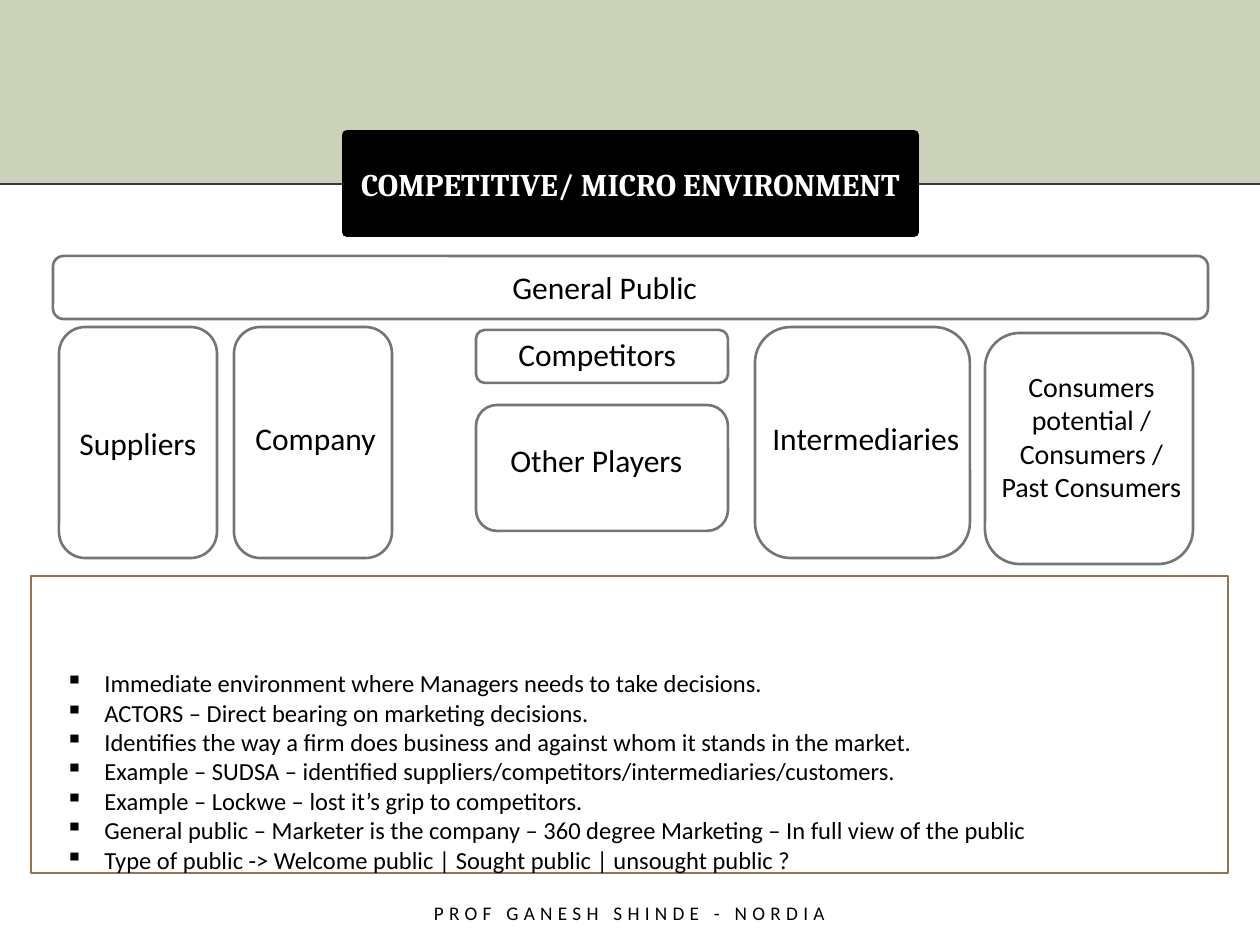
"""Build the competitive / micro environment slide."""
import pptx
import pptx.dml.color
import pptx.enum.shapes
import pptx.enum.text
import pptx.util
from lxml import etree

SCALE = 914400 / 126
SHAPE = pptx.enum.shapes.MSO_SHAPE
ALIGN = pptx.enum.text.PP_ALIGN
MIDDLE = pptx.enum.text.MSO_ANCHOR.MIDDLE

TITLE = "COMPETITIVE/ MICRO ENVIRONMENT"
FOOTER = "PROF GANESH SHINDE - NORDIA"
ACTOR_BOXES = [
    (53, 256, 1155, 63),
    (59, 327, 158, 231),
    (234, 327, 158, 231),
    (985, 333, 208, 231),
    (755, 327, 215, 231),
    (476, 330, 252, 53),
    (476, 405, 252, 126),
]
LABELS = [
    ("General Public", (500, 262, 300, 50), 18, ALIGN.LEFT),
    ("Competitors", (506, 329, 206, 50), 18, ALIGN.LEFT),
    ("Other Players", (498, 435, 219, 50), 18, ALIGN.LEFT),
    ("Suppliers", (67, 418, 150, 50), 18, ALIGN.LEFT),
    ("Company", (243, 413, 150, 50), 18, ALIGN.LEFT),
    ("Intermediaries", (760, 413, 215, 50), 18, ALIGN.LEFT),
    ("Consumers potential / Consumers / Past Consumers", (984, 363, 215, 149), 16, ALIGN.CENTER),
]
NOTES = [
    "Immediate environment where Managers needs to take decisions.",
    "ACTORS – Direct bearing on marketing decisions.",
    "Identifies the way a firm does business and against whom it stands in the market.",
    "Example – SUDSA – identified suppliers/competitors/intermediaries/customers.",
    "Example – Lockwe – lost it’s grip to competitors.",
    "General public – Marketer is the company – 360 degree Marketing – In full view of the public",
    "Type of public -> Welcome public | Sought public | unsought public ?",
]


def px(length):
    return pptx.util.Emu(round(length * SCALE))


def color(value):
    return pptx.dml.color.RGBColor.from_string(value)


def paint(shape, fill, line=None, width=1.5):
    shape.fill.solid()
    shape.fill.fore_color.rgb = color(fill)
    if line:
        shape.line.color.rgb = color(line)
        shape.line.width = pptx.util.Pt(width)
    else:
        shape.line.fill.background()


def add_box(slide, kind, place, fill, line=None):
    shape = slide.shapes.add_shape(kind, *map(px, place))
    shape.shadow.inherit = False
    paint(shape, fill, line)


def write(paragraph, text, size, font="Calibri", ink="000000", align=ALIGN.LEFT):
    paragraph.alignment = align
    run = paragraph.add_run()
    run.text = text
    run.font.size = pptx.util.Pt(size)
    run.font.name = font
    run.font.color.rgb = color(ink)
    return run


def add_text_frame(slide, place):
    frame = slide.shapes.add_textbox(*map(px, place)).text_frame
    frame.word_wrap = True
    return frame


def add_bullet(paragraph):
    properties = paragraph._p.get_or_add_pPr()
    properties.set("marL", str(px(39)))
    properties.set("indent", str(px(-39)))
    bullet = etree.SubElement(properties, pptx.oxml.ns.qn("a:buChar"))
    bullet.set("char", "▪")


def add_backdrop(slide):
    slide.background.fill.solid()
    slide.background.fill.fore_color.rgb = color("CCD1B9")
    add_box(slide, SHAPE.RECTANGLE, (0, 184, 1260, 761), "FFFFFF")
    rule = slide.shapes.add_connector(
        pptx.enum.shapes.MSO_CONNECTOR.STRAIGHT, *map(px, (0, 184, 1260, 184)))
    rule.line.color.rgb = color("3E3737")
    rule.line.width = pptx.util.Pt(1)
    etree.SubElement(rule._element.spPr, pptx.oxml.ns.qn("a:effectLst"))


def add_title(slide):
    title = slide.shapes.title
    title.left, title.top, title.width, title.height = map(px, (347, 135, 567, 97))
    paint(title, "000000", "000000", 6)
    frame = title.text_frame
    frame.vertical_anchor = MIDDLE
    frame.margin_left = frame.margin_right = px(6)
    paragraph = frame.paragraphs[0]
    paragraph.space_before = pptx.util.Pt(4)
    write(paragraph, TITLE, 18, "Cambria", "FFFFFF", ALIGN.CENTER).font.bold = True
    slide.shapes._spTree.append(title._element)


def add_footer(slide):
    frame = add_text_frame(slide, (199, 893, 861, 40))
    frame.vertical_anchor = MIDDLE
    run = write(frame.paragraphs[0], FOOTER, 11, align=ALIGN.CENTER)
    run.font._element.set("spc", "300")


def add_notes(slide):
    add_box(slide, SHAPE.RECTANGLE, (31, 576, 1197, 297), "FFFFFF", "94734E")
    frame = add_text_frame(slide, (53, 662, 1155, 218))
    for index, note in enumerate(NOTES):
        paragraph = frame.add_paragraph() if index else frame.paragraphs[0]
        write(paragraph, note, 14)
        add_bullet(paragraph)


def main():
    presentation = pptx.Presentation()
    presentation.slide_width, presentation.slide_height = px(1260), px(945)
    slide = presentation.slides.add_slide(presentation.slide_layouts[5])
    add_backdrop(slide)
    add_title(slide)
    add_footer(slide)
    for place in ACTOR_BOXES:
        add_box(slide, SHAPE.ROUNDED_RECTANGLE, place, "FFFFFF", "6F777D")
    for text, place, size, align in LABELS:
        write(add_text_frame(slide, place).paragraphs[0], text, size, align=align)
    add_notes(slide)
    presentation.save("out.pptx")


if __name__ == "__main__":
    main()
